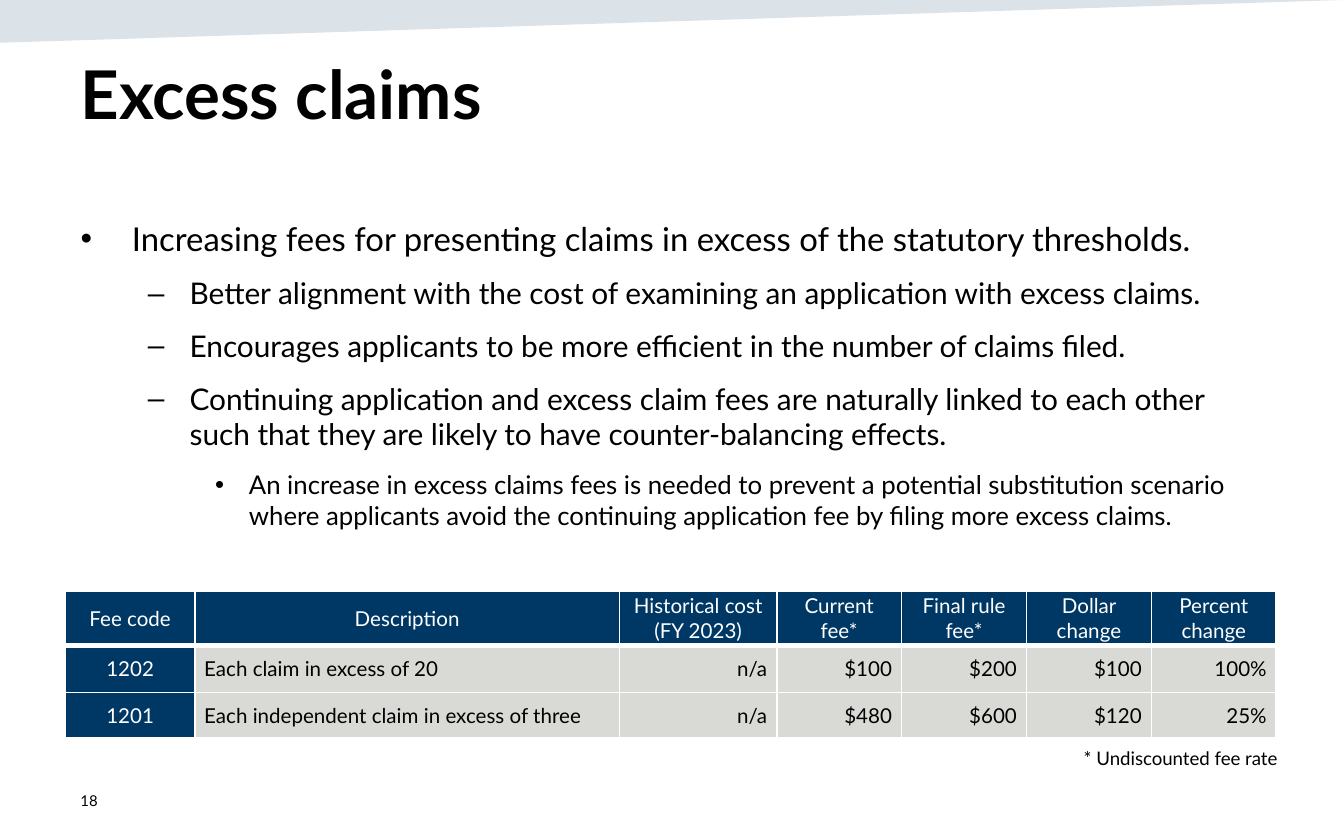
from pptx import Presentation
from pptx.dml.color import RGBColor
from pptx.enum.text import MSO_ANCHOR, MSO_AUTO_SIZE, PP_ALIGN
from pptx.oxml import parse_xml
from pptx.oxml.ns import nsdecls, qn
from pptx.util import Cm, Pt

LEFT, CENTER, RIGHT = PP_ALIGN.LEFT, PP_ALIGN.CENTER, PP_ALIGN.RIGHT
TOP, MIDDLE = MSO_ANCHOR.TOP, MSO_ANCHOR.MIDDLE
NO_AUTOFIT = MSO_AUTO_SIZE.NONE

FONT = "Lato"
BLACK, WHITE, NAVY, GREY, BAND = "000000", "FFFFFF", "003865", "D9D9D6", "164469"

# Font size (pt), left margin and hanging indent (cm) for each bullet level
LEVELS = [(17.6, 0.97, 0.97), (16, 2.06, 0.79), (13.8, 3.18, 0.64)]
BULLETS = [
    (0, "Increasing fees for presenting claims in excess of the statutory thresholds."),
    (1, "Better alignment with the cost of examining an application with excess claims."),
    (1, "Encourages applicants to be more efficient in the number of claims filed."),
    (1, "Continuing application and excess claim fees are naturally linked to each other "
        "such that they are likely to have counter-balancing effects."),
    (2, "An increase in excess claims fees is needed to prevent a potential substitution "
        "scenario where applicants avoid the continuing application fee by filing more "
        "excess claims."),
]

COL_WIDTHS = [2.44, 8.03, 2.97] + [2.36] * 4
ROW_HEIGHTS = [1.02, 0.89, 0.86]
FEES = [
    ["Fee code", "Description", "Historical cost\n(FY 2023)", "Current fee*",
     "Final rule fee*", "Dollar change", "Percent change"],
    ["1202", "Each claim in excess of 20", "n/a", "$100", "$200", "$100", "100%"],
    ["1201", "Each independent claim in excess of three", "n/a", "$480", "$600", "$120", "25%"],
]


def rgb(color):
    return RGBColor.from_string(color)


def set_attrs(obj, values):
    for name, value in values.items():
        setattr(obj, name, value)


def format_paragraph(p, size, color=BLACK, bold=False, **spacing):
    set_attrs(p, spacing)
    for r in p.runs:
        set_attrs(r.font, {"name": FONT, "size": Pt(size), "bold": bold})
        r.font.color.rgb = rgb(color)


def place(s, left, top, width, height):
    box = {"left": left, "top": top, "width": width, "height": height}
    set_attrs(s, {name: Cm(value) for name, value in box.items()})


def add_band(slide):
    """Draw the translucent wedge along the top edge."""
    builder = slide.shapes.build_freeform(0, 0)
    builder.add_line_segments([(0, Cm(0.81)), (Cm(25.4), 0)], close=True)
    s = builder.convert_to_shape()
    s.shadow.inherit = False
    s.line.fill.background()
    s.fill.solid()
    s.fill.fore_color.rgb = rgb(BAND)
    clr = s.element.spPr.find(".//" + qn("a:srgbClr"))
    clr.append(parse_xml(f'<a:alpha {nsdecls("a")} val="15000"/>'))


def fill_title(s, text):
    place(s, 1.27, 0.86, 22.86, 2.64)
    tf = s.text_frame
    tf.text = text
    set_attrs(tf, {"vertical_anchor": TOP, "auto_size": NO_AUTOFIT})
    format_paragraph(tf.paragraphs[0], 36, bold=True, alignment=LEFT)


def fill_body(s, bullets):
    place(s, 1.27, 4.01, 22.86, 7.11)
    tf = s.text_frame
    tf.text = "\n".join(text for _, text in bullets)
    tf.auto_size = NO_AUTOFIT
    for p, (level, _) in zip(tf.paragraphs, bullets):
        size, margin, hanging = LEVELS[level]
        format_paragraph(p, size, level=level, space_before=Pt(9))
        pPr = p._p.get_or_add_pPr()
        pPr.set("marL", str(Cm(margin)))
        pPr.set("indent", str(-Cm(hanging)))


def add_borders(cell, bottom):
    tcPr = cell._tc.get_or_add_tcPr()
    for side, width in {"L": 1, "R": 1, "T": 1, "B": bottom}.items():
        tcPr.append(parse_xml(
            f'<a:ln{side} {nsdecls("a")} w="{Pt(width)}"><a:solidFill>'
            f'<a:srgbClr val="{WHITE}"/></a:solidFill></a:ln{side}>'))


def fill_cell(cell, text, row, col):
    header = row == 0
    dark = header or col == 0
    add_borders(cell, 3 if header else 1)
    cell.fill.solid()
    cell.fill.fore_color.rgb = rgb(NAVY if dark else GREY)
    set_attrs(cell, {"vertical_anchor": MIDDLE, "margin_left": Cm(0.18),
                     "margin_right": Cm(0.18), "margin_top": 0, "margin_bottom": 0})
    cell.text_frame.text = text
    gap = Pt(0 if header else 6)
    alignment = CENTER if dark else LEFT if col == 1 else RIGHT
    for p in cell.text_frame.paragraphs:
        format_paragraph(p, 11, WHITE if dark else BLACK, alignment=alignment,
                         space_before=gap, space_after=gap)


def add_fee_table(slide):
    table = slide.shapes.add_table(
        len(FEES), len(COL_WIDTHS), Cm(1.24), Cm(11.18),
        Cm(sum(COL_WIDTHS)), Cm(sum(ROW_HEIGHTS))).table
    table.horz_banding = False
    for column, width in zip(table.columns, COL_WIDTHS):
        column.width = Cm(width)
    for row, height in zip(table.rows, ROW_HEIGHTS):
        row.height = Cm(height)
    for i, values in enumerate(FEES):
        for j, text in enumerate(values):
            fill_cell(table.cell(i, j), text, i, j)


def add_text(slide, text, box, size, alignment, anchor):
    tf = slide.shapes.add_textbox(*map(Cm, box)).text_frame
    set_attrs(tf, {"text": text, "word_wrap": True, "vertical_anchor": anchor})
    format_paragraph(tf.paragraphs[0], size, alignment=alignment)


def main():
    prs = Presentation()
    set_attrs(prs, {"slide_width": Cm(25.4), "slide_height": Cm(15.88)})
    slide = prs.slides.add_slide(prs.slide_layouts[1])
    add_band(slide)
    fill_title(slide.shapes.title, "Excess claims")
    fill_body(slide.placeholders[1], BULLETS)
    add_fee_table(slide)
    add_text(slide, "* Undiscounted fee rate", (1.83, 14, 22.56, 0.69), 10, RIGHT, TOP)
    add_text(slide, "18", (1.27, 14.71, 5.72, 0.84), 8, LEFT, MIDDLE)
    prs.save("out.pptx")


if __name__ == "__main__":
    main()
